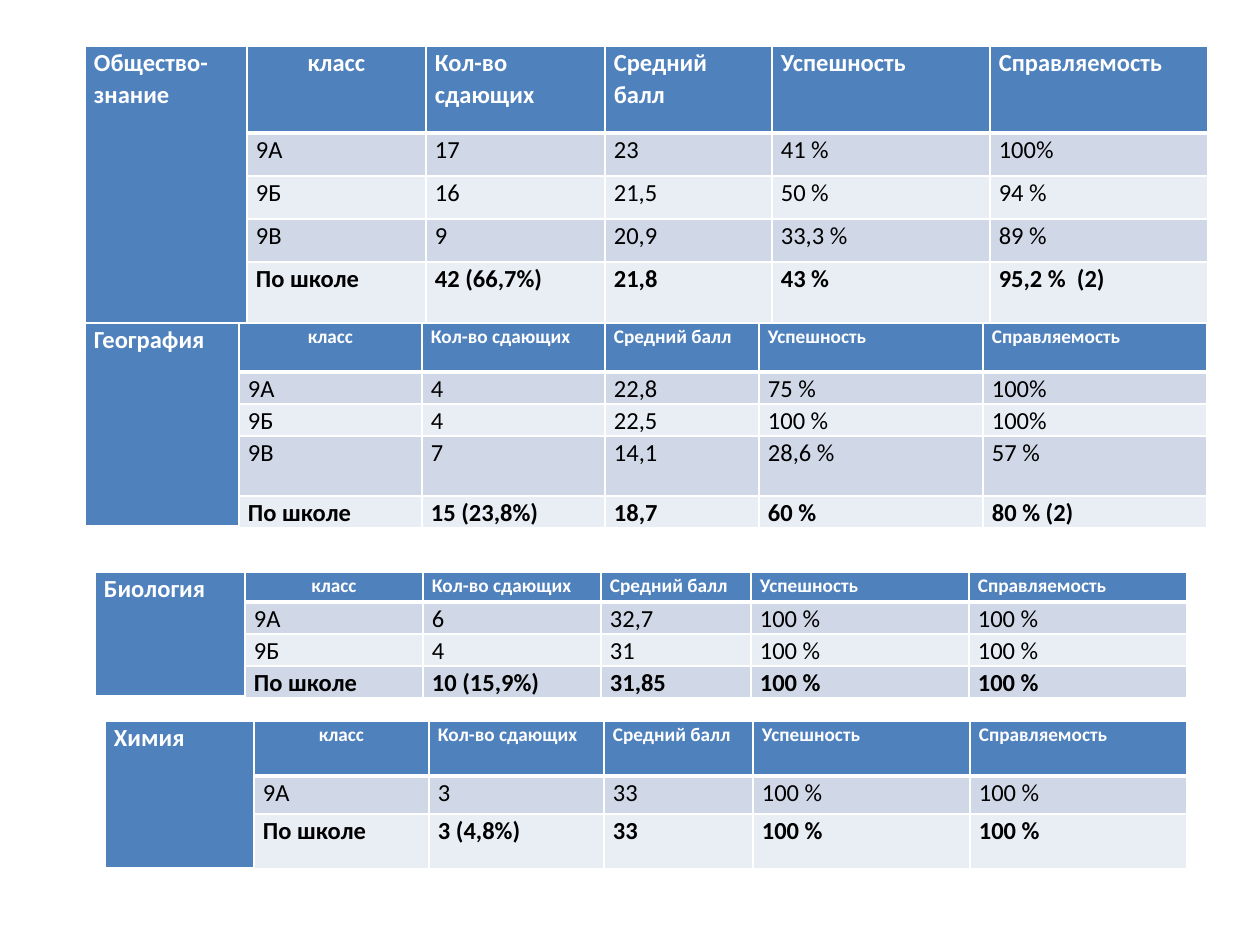
import pptx
import pptx.dml.color
import pptx.enum.text
import pptx.oxml
import pptx.util

PX = 914400 / 126
BLUE = pptx.dml.color.RGBColor(0x4F, 0x81, 0xBD)
DARK_BAND = pptx.dml.color.RGBColor(0xD0, 0xD8, 0xE8)
LIGHT_BAND = pptx.dml.color.RGBColor(0xE9, 0xED, 0xF4)
WHITE = pptx.dml.color.RGBColor(0xFF, 0xFF, 0xFF)
BLACK = pptx.dml.color.RGBColor(0, 0, 0)
NAMESPACE = "http://schemas.openxmlformats.org/drawingml/2006/main"
LEFT = pptx.enum.text.PP_ALIGN.LEFT
CENTER = pptx.enum.text.PP_ALIGN.CENTER


def px(length):
    return pptx.util.Emu(round(length * PX))


def write_cell(cell, text, fill, color=BLACK, size=14, bold=False, align=LEFT, bottom=1):
    cell.margin_left = cell.margin_right = px(9)
    cell.margin_top = cell.margin_bottom = 0
    properties = cell._tc.get_or_add_tcPr()
    for side, width in (("L", 1), ("R", 1), ("T", 1), ("B", bottom)):
        properties.append(pptx.oxml.parse_xml(
            f'<a:ln{side} xmlns:a="{NAMESPACE}" w="{pptx.util.Pt(width)}">'
            f'<a:solidFill><a:srgbClr val="{WHITE}"/></a:solidFill></a:ln{side}>'
        ))
    cell.fill.solid()
    cell.fill.fore_color.rgb = fill
    if not text:
        return
    cell.text_frame.text = text
    for para in cell.text_frame.paragraphs:
        para.alignment = align
        para.line_spacing = 1.07
        for span in para.runs:
            span.font.name = "Calibri"
            span.font.size = pptx.util.Pt(size)
            span.font.bold = bold
            span.font.color.rgb = color


HEADINGS = ["класс", "Кол-во сдающих", "Средний балл", "Успешность", "Справляемость"]
SUBJECTS = [
    {
        "name": "Общество-\nзнание", "left": 85, "top": 46, "heading_size": 14,
        "columns": [162, 179, 179, 167, 218, 218], "rows": [87, 43, 43, 43, 62],
        "results": [
            ["9А", "17", "23", "41 %", "100%"],
            ["9Б", "16", "21,5", "50 %", "94 %"],
            ["9В", "9", "20,9", "33,3 %", "89 %"],
            ["По школе", "42 (66,7%)", "21,8", "43 %", "95,2 %  (2)"],
        ],
    },
    {
        "name": "География", "left": 85, "top": 323, "heading_size": 11,
        "columns": [154, 183, 183, 154, 224, 224], "rows": [49, 29, 29, 60, 29],
        "results": [
            ["9А", "4", "22,8", "75 %", "100%"],
            ["9Б", "4", "22,5", "100 %", "100%"],
            ["9В", "7", "14,1", "28,6 %", "57 %"],
            ["По школе", "15 (23,8%)", "18,7", "60 %", "80 % (2)"],
        ],
    },
    {
        "name": "Биология", "left": 95, "top": 572, "heading_size": 11,
        "columns": [150, 178, 178, 150, 218, 218], "rows": [30, 30, 30, 30],
        "results": [
            ["9А", "6", "32,7", "100 %", "100 %"],
            ["9Б", "4", "31", "100 %", "100 %"],
            ["По школе", "10 (15,9%)", "31,85", "100 %", "100 %"],
        ],
    },
    {
        "name": "Химия", "left": 105, "top": 721, "heading_size": 11,
        "columns": [149, 175, 175, 149, 217, 217], "rows": [55, 38, 55],
        "results": [
            ["9А", "3", "33", "100 %", "100 %"],
            ["По школе", "3 (4,8%)", "33", "100 %", "100 %"],
        ],
    },
]

deck = pptx.Presentation()
deck.slide_width = px(1260)
deck.slide_height = px(945)
page = deck.slides.add_slide(deck.slide_layouts[6])

for subject in SUBJECTS:
    widths, heights = subject["columns"], subject["rows"]
    frame = page.shapes.add_table(
        len(heights), len(widths), px(subject["left"]), px(subject["top"]),
        px(sum(widths)), px(sum(heights)),
    )
    table = frame.table
    for column, width in zip(table.columns, widths):
        column.width = px(width)
    for row, height in zip(table.rows, heights):
        row.height = px(height)

    table.cell(0, 0).merge(table.cell(len(heights) - 1, 0))
    for index in range(len(heights)):
        name = subject["name"] if index == 0 else ""
        write_cell(table.cell(index, 0), name, BLUE, color=WHITE, bold=True, bottom=3)

    for index, heading in enumerate(HEADINGS, start=1):
        write_cell(table.cell(0, index), heading, BLUE, color=WHITE, bold=True, bottom=3,
                   size=subject["heading_size"], align=CENTER if index == 1 else LEFT)

    for number, result in enumerate(subject["results"], start=1):
        band = DARK_BAND if number % 2 else LIGHT_BAND
        for index, value in enumerate(result, start=1):
            write_cell(table.cell(number, index), value, band, bold=result[0] == "По школе",
                       bottom=1)
    for index in range(1, len(widths)):
        top_line = table.cell(1, index)._tc.tcPr.find(f"{{{NAMESPACE}}}lnT")
        top_line.set("w", str(pptx.util.Pt(3)))

deck.save("out.pptx")
